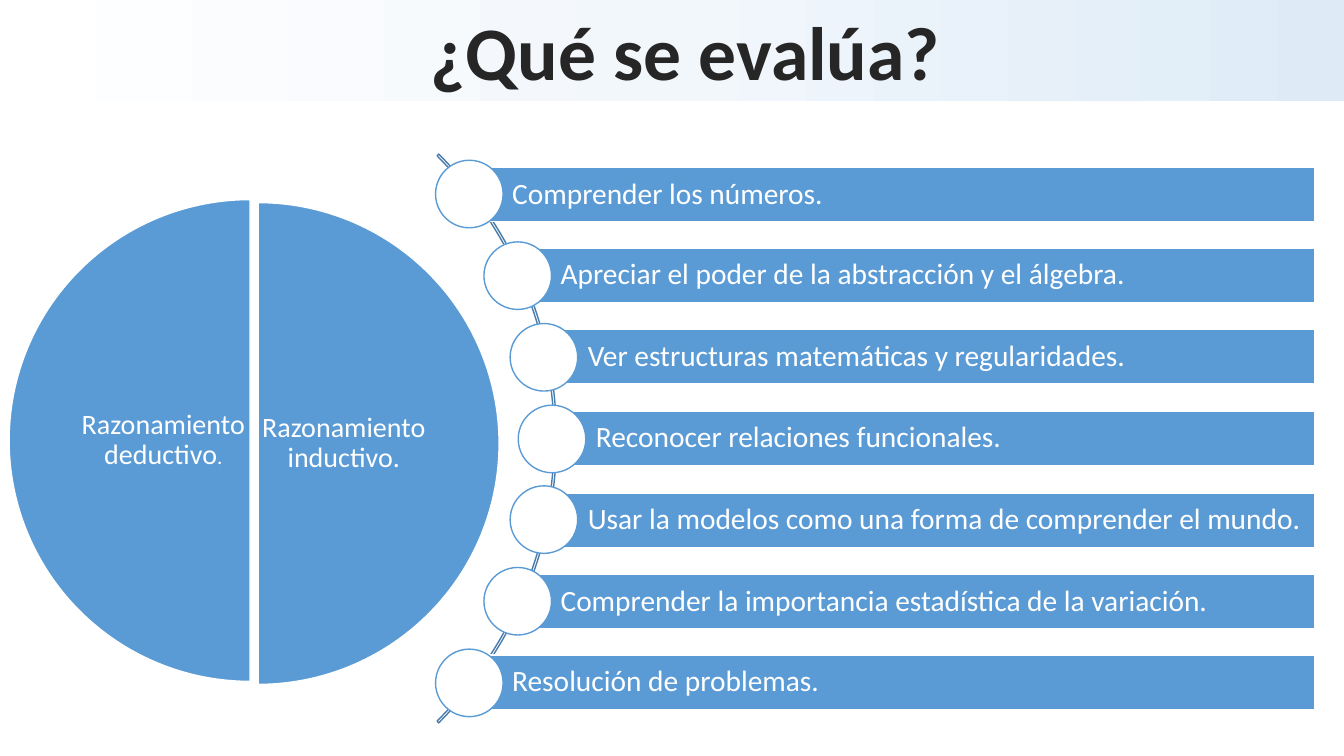
from dataclasses import dataclass
from math import sqrt

from lxml import etree
from pptx import Presentation
from pptx.dml.color import RGBColor as Rgb
from pptx.enum.shapes import MSO_SHAPE as Geo
from pptx.enum.text import MSO_ANCHOR as Anchor, MSO_AUTO_SIZE as Auto, PP_ALIGN as Align
from pptx.oxml import parse_xml
from pptx.oxml.ns import nsdecls, qn
from pptx.util import Emu, Pt

SCALE = 9144  # EMU in one px, 100 px to the inch
FONT = "Calibri"
HUES = {"blue": "5B9BD5", "arc": "497CAB", "white": "FFFFFF", "ink": "262626",
        "pale": "DEEBF7", "mist": "F2F7FC"}


@dataclass
class Box:
    left: int
    top: int
    wide: int
    high: int


@dataclass
class Half:
    pie: Box
    turn: tuple[int, int]
    label: Box
    text: str
    dot: str = ""


GOALS = [
    "Comprender los números.",
    "Apreciar el poder de la abstracción y el álgebra.",
    "Ver estructuras matemáticas y regularidades.",
    "Reconocer relaciones funcionales.",
    "Usar la modelos como una forma de comprender el mundo.",
    "Comprender la importancia estadística de la variación.",
    "Resolución de problemas.",
]
HALVES = [
    Half(Box(17, 201, 478, 478), (162, 54), Box(257, 272, 168, 336),
         "Razonamiento inductivo."),
    Half(Box(9, 198, 478, 478), (54, 162), Box(78, 269, 168, 336),
         "Razonamiento deductivo", "."),
]


def px(size: float) -> Emu:
    return Emu(round(size) * SCALE)


def hue(name: str) -> Rgb:
    return Rgb.from_string(HUES[name])


def place(box: Box) -> list[Emu]:
    return [px(box.left), px(box.top), px(box.wide), px(box.high)]


def draw(slide, kind: Geo, box: Box, fill: str = "", line: str = "", turn: tuple = ()):
    shape = slide.shapes.add_shape(kind, *place(box))
    shape.shadow.inherit = False
    for i, value in enumerate(turn):
        shape.adjustments[i] = value
    if fill:
        shape.fill.solid()
        shape.fill.fore_color.rgb = hue(fill)
    else:
        shape.fill.background()
    if line:
        shape.line.color.rgb = hue(line)
        shape.line.width = Pt(1)
    else:
        shape.line.fill.background()
    return shape


def style(run, size: int, color: str = "white", bold: bool = False) -> None:
    font = run.font
    font.name, font.size, font.bold = FONT, Pt(size), bold
    font.color.rgb = hue(color)


def write(shape, text: str, size: int, align: Align, pads: tuple):
    frame = shape.text_frame
    frame.text = text
    frame.word_wrap = True
    frame.vertical_anchor = Anchor.MIDDLE
    frame.margin_left, frame.margin_top, frame.margin_right, frame.margin_bottom = map(px, pads)
    para = frame.paragraphs[0]
    para.alignment, para.line_spacing = align, 0.9
    style(para.runs[0], size)
    return para


def shade(shape, stops: list[tuple[int, str]], angle: int) -> None:
    marks = "".join(f'<a:gs pos="{pos * 1000}"><a:srgbClr val="{HUES[name]}"/></a:gs>'
                    for pos, name in stops)
    fill = parse_xml(f'<a:gradFill {nsdecls("a")}><a:gsLst>{marks}</a:gsLst>'
                     f'<a:lin ang="{angle * 60000}" scaled="0"/></a:gradFill>')
    props = shape.element.spPr
    props.replace(props.find(qn("a:noFill")), fill)


def outline(run, color: str, width: float) -> None:
    line = etree.Element(qn("a:ln"), w=str(Pt(width)))
    fill = etree.SubElement(line, qn("a:solidFill"))
    etree.SubElement(fill, qn("a:srgbClr"), val=HUES[color])
    run.font._element.insert(0, line)


def add_head(slide) -> None:
    band = draw(slide, Geo.RECTANGLE, Box(0, 0, 1333, 100))
    shade(band, [(0, "pale"), (50, "mist"), (100, "white")], 180)
    frame = slide.shapes.add_textbox(*place(Box(415, 0, 530, 101))).text_frame
    frame.text = "¿Qué se evalúa?"
    frame.word_wrap = False
    frame.auto_size = Auto.SHAPE_TO_FIT_TEXT
    para = frame.paragraphs[0]
    para.alignment = Align.CENTER
    style(para.runs[0], 54, "ink", True)
    outline(para.runs[0], "white", 1.06)


def add_goals(slide) -> None:
    draw(slide, Geo.BLOCK_ARC, Box(-246, 36, 798, 798), line="arc", turn=(189, 27, 0.003))
    mid_x, mid_y, radius = 153, 435, 395
    step, right, high, disc = 80.83, 1304, 54, 67
    for i, text in enumerate(GOALS):
        rise = (i - len(GOALS) // 2) * step
        x = round(mid_x + sqrt(radius ** 2 - rise ** 2))
        y = mid_y + rise
        bar = draw(slide, Geo.RECTANGLE, Box(x, round(y - high / 2), right - x, high),
                   "blue", "white")
        write(bar, text, 21, Align.LEFT, (43, 6, 6, 6))
        draw(slide, Geo.OVAL, Box(round(x - disc / 2), round(y - disc / 2), disc, disc),
             "white", "blue")


def add_halves(slide) -> None:
    for half in HALVES:
        draw(slide, Geo.PIE, half.pie, "blue", "white", half.turn)
        label = slide.shapes.add_textbox(*place(half.label))
        para = write(label, half.text, 20, Align.CENTER, (2, 3, 2, 3))
        if half.dot:
            run = para.add_run()
            run.text = half.dot
            style(run, 15)


def main() -> None:
    deck = Presentation()
    deck.slide_width, deck.slide_height = px(1333), px(750)
    slide = deck.slides.add_slide(deck.slide_layouts[6])
    add_head(slide)
    add_goals(slide)
    add_halves(slide)
    deck.save("out.pptx")


if __name__ == "__main__":
    main()
